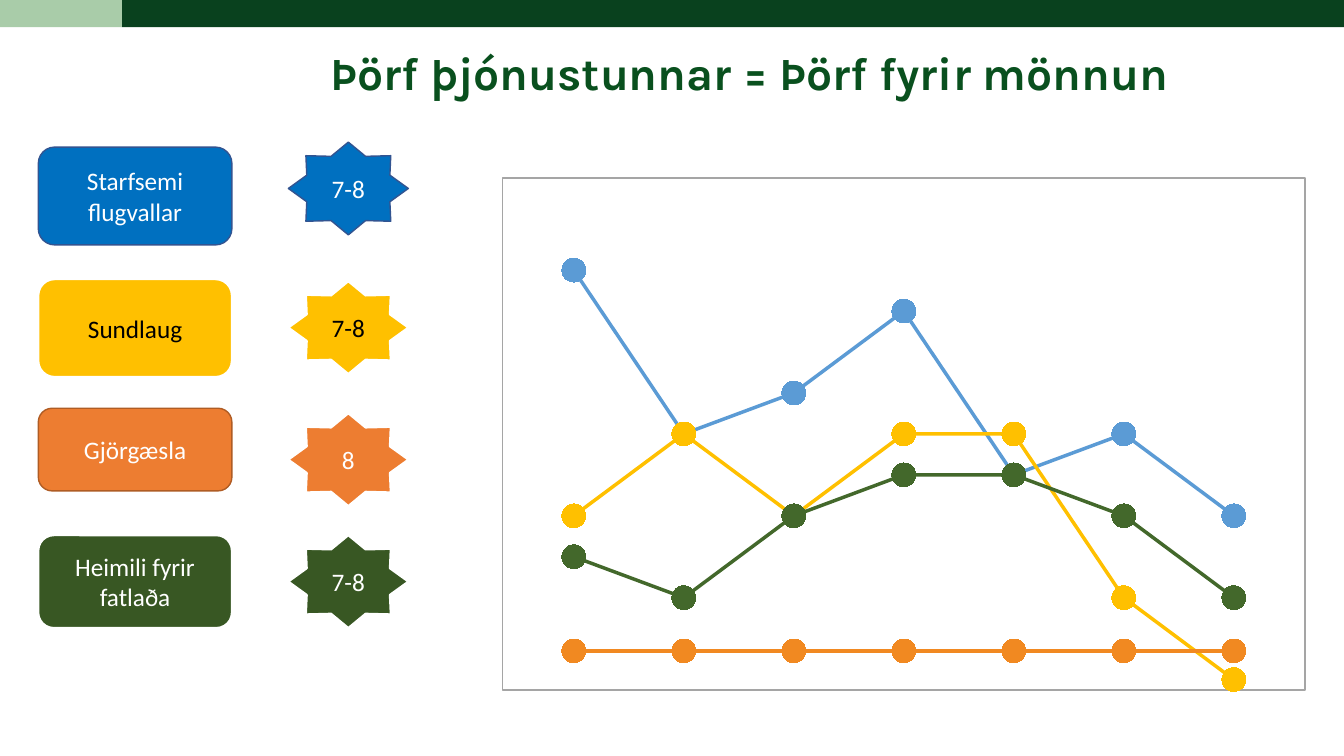
"""Build the staffing-need slide with a line chart and service labels."""
from copy import deepcopy

from lxml import etree
from pptx import Presentation
from pptx.chart.data import CategoryChartData
from pptx.dml.color import RGBColor
from pptx.enum.chart import XL_CHART_TYPE as CHART, XL_MARKER_STYLE as MARKER
from pptx.enum.shapes import MSO_SHAPE as SHAPE
from pptx.enum.text import MSO_ANCHOR as ANCHOR, MSO_AUTO_SIZE as AUTO, PP_ALIGN as ALIGN
from pptx.oxml import parse_xml
from pptx.oxml.ns import nsdecls, qn
from pptx.util import Inches, Pt

WHITE = RGBColor(0xFF, 0xFF, 0xFF)
BLACK = RGBColor(0x00, 0x00, 0x00)
BAR_DARK = RGBColor(0x09, 0x41, 0x1E)
BAR_LIGHT = RGBColor(0xA9, 0xCC, 0xA9)
TITLE_GREEN = RGBColor(0x09, 0x50, 0x1E)
BLUE = RGBColor(0x00, 0x70, 0xC0)
BLUE_EDGE = RGBColor(0x32, 0x54, 0x91)
YELLOW = RGBColor(0xFF, 0xC0, 0x00)
ORANGE = RGBColor(0xED, 0x7D, 0x31)
ORANGE_EDGE = RGBColor(0xAF, 0x5C, 0x24)
GREEN = RGBColor(0x38, 0x57, 0x23)
LINE_BLUE = RGBColor(0x5B, 0x9B, 0xD5)
LINE_GREEN = RGBColor(0x43, 0x68, 0x2B)
LINE_ORANGE = RGBColor(0xF1, 0x89, 0x21)
BORDER_GREY = RGBColor(0xA5, 0xA5, 0xA5)

# label, label top, label height, label edge, hours, star top, star edge, fill, text
SERVICES = [
    ("Starfsemi flugvallar", 1.46, 0.97, BLUE_EDGE, "7-8", 1.41, BLUE_EDGE, BLUE, WHITE),
    ("Sundlaug", 2.77, 0.97, WHITE, "7-8", 2.79, WHITE, YELLOW, BLACK),
    ("Gjörgæsla", 4.05, 0.82, ORANGE_EDGE, "8", 4.1, WHITE, ORANGE, WHITE),
    ("Heimili fyrir fatlaða", 5.31, 0.92, WHITE, "7-8", 5.31, WHITE, GREEN, WHITE),
]
SERIES = [
    ("Series 1", (100, 60, 70, 90, 50, 60, 40), LINE_BLUE),
    ("Series 2", (40, 60, 40, 60, 60, 20, 0), YELLOW),
    ("Series 3", (30, 20, 40, 50, 50, 40, 20), LINE_GREEN),
    ("Series 4", (7, 7, 7, 7, 7, 7, 7), LINE_ORANGE),
]


def add_block(slide, kind, box, fill, edge=None):
    sp = slide.shapes.add_shape(kind, *map(Inches, box))
    sp.shadow.inherit = False
    sp.fill.solid()
    sp.fill.fore_color.rgb = fill
    if edge is None:
        sp.line.fill.background()
    else:
        sp.line.color.rgb = edge
        sp.line.width = Pt(1.5 if edge == WHITE else 1)
    return sp


def add_label(slide, kind, box, text, fill, edge, color):
    tf = add_block(slide, kind, box, fill, edge).text_frame
    tf.word_wrap = True
    tf.vertical_anchor = ANCHOR.MIDDLE
    p = tf.paragraphs[0]
    p.text = text
    p.alignment = ALIGN.CENTER
    p.font.name = "Calibri"
    p.font.size = Pt(18)
    p.font.color.rgb = color


def set_title(slide, text):
    sp = slide.shapes.title
    sp.left, sp.top, sp.width, sp.height = map(Inches, (3.18, 0.45, 10.83, 0.86))
    tf = sp.text_frame
    tf.auto_size = AUTO.NONE
    tf.word_wrap = True
    tf.vertical_anchor = ANCHOR.TOP
    p = tf.paragraphs[0]
    p.text = text
    p.alignment = ALIGN.LEFT
    p.line_spacing = 0.9
    p.font.name = "Karla"
    p.font.size = Pt(33)
    p.font.bold = True
    p.font.color.rgb = TITLE_GREEN


def format_series(series, color):
    series.smooth = False
    series.format.line.color.rgb = color
    series.format.line.width = Pt(2.5)
    marker = series.marker
    marker.style = MARKER.CIRCLE
    marker.size = 17
    marker.format.fill.solid()
    marker.format.fill.fore_color.rgb = color
    marker.format.line.color.rgb = color


def frame_chart(chart):
    space = chart._chartSpace
    space.find(qn("c:chart")).addnext(parse_xml(
        f'<c:spPr {nsdecls("c", "a")}>'
        f'<a:solidFill><a:srgbClr val="{WHITE}"/></a:solidFill>'
        f'<a:ln w="{Pt(1)}"><a:solidFill><a:srgbClr val="{BORDER_GREY}"/></a:solidFill></a:ln>'
        '</c:spPr>'))


def place_plot(plot_area, x, y, w, h):
    for old in plot_area.findall(qn("c:layout")):
        plot_area.remove(old)
    layout = parse_xml(f'<c:layout {nsdecls("c")}><c:manualLayout/></c:layout>')
    parts = [("layoutTarget", "inner"), ("xMode", "edge"), ("yMode", "edge"),
             ("x", x), ("y", y), ("w", w), ("h", h)]
    for tag, val in parts:
        etree.SubElement(layout[0], qn(f"c:{tag}")).set("val", str(val))
    plot_area.insert(0, layout)


def move_last_to_second_axis(plot_area, maximum):
    first = plot_area.find(qn("c:lineChart"))
    axes = [plot_area.find(qn(f"c:{tag}")) for tag in ("catAx", "valAx")]
    second = deepcopy(first)
    first.remove(first.findall(qn("c:ser"))[-1])
    for ser in second.findall(qn("c:ser"))[:-1]:
        second.remove(ser)
    first.addnext(second)
    ids = {ax.find(qn("c:axId")).get("val"): str(5001 + i) for i, ax in enumerate(axes)}
    copies = [deepcopy(ax) for ax in axes]
    for part in [second, *copies]:
        for el in part.iter(qn("c:axId"), qn("c:crossAx")):
            el.set("val", ids[el.get("val")])
    value_axis = copies[1]
    value_axis.find(qn("c:axPos")).set("val", "r")
    value_axis.find(qn("c:crosses")).set("val", "max")
    value_axis.find(qn("c:scaling")).find(qn("c:max")).set("val", str(maximum))
    for ax in reversed(copies):
        axes[1].addnext(ax)


def add_need_chart(slide):
    data = CategoryChartData()
    data.categories = [str(day) for day in range(1, 8)]
    for name, values, _ in SERIES:
        data.add_series(name, values)
    box = map(Inches, (4.98, 1.76, 7.97, 5.1))
    chart = slide.shapes.add_chart(CHART.LINE_MARKERS, *box, data).chart
    chart.has_title = False
    chart.has_legend = False
    chart.font.name = "Calibri"
    chart.font.size = Pt(10)
    chart.font.color.rgb = BLACK
    chart.plots[0].vary_by_categories = False
    for series, (_, _, color) in zip(chart.plots[0].series, SERIES):
        format_series(series, color)
    chart.value_axis.minimum_scale = 0
    chart.value_axis.maximum_scale = 120
    chart.value_axis.has_major_gridlines = False
    chart.category_axis.visible = False
    chart.value_axis.visible = False
    plot_area = chart._chartSpace.find(qn("c:chart")).find(qn("c:plotArea"))
    place_plot(plot_area, 0.02, 0.02, 0.96, 0.96)
    move_last_to_second_axis(plot_area, 12)
    frame_chart(chart)


def main():
    prs = Presentation()
    prs.slide_width, prs.slide_height = Inches(13.33), Inches(7.5)
    slide = prs.slides.add_slide(prs.slide_layouts[5])
    add_block(slide, SHAPE.RECTANGLE, (1.21, 0, 12.12, 0.27), BAR_DARK)
    add_block(slide, SHAPE.RECTANGLE, (0, 0, 1.21, 0.27), BAR_LIGHT)
    set_title(slide, "Þörf þjónustunnar = Þörf fyrir mönnun")
    add_need_chart(slide)
    for name, top, height, edge, hours, star_top, star_edge, fill, color in SERVICES:
        add_label(slide, SHAPE.ROUNDED_RECTANGLE, (0.38, top, 1.92, height),
                  name, fill, edge, color)
        add_label(slide, SHAPE.STAR_8_POINT, (2.86, star_top, 1.19, 0.92),
                  hours, fill, star_edge, color)
    prs.save("out.pptx")


if __name__ == "__main__":
    main()
